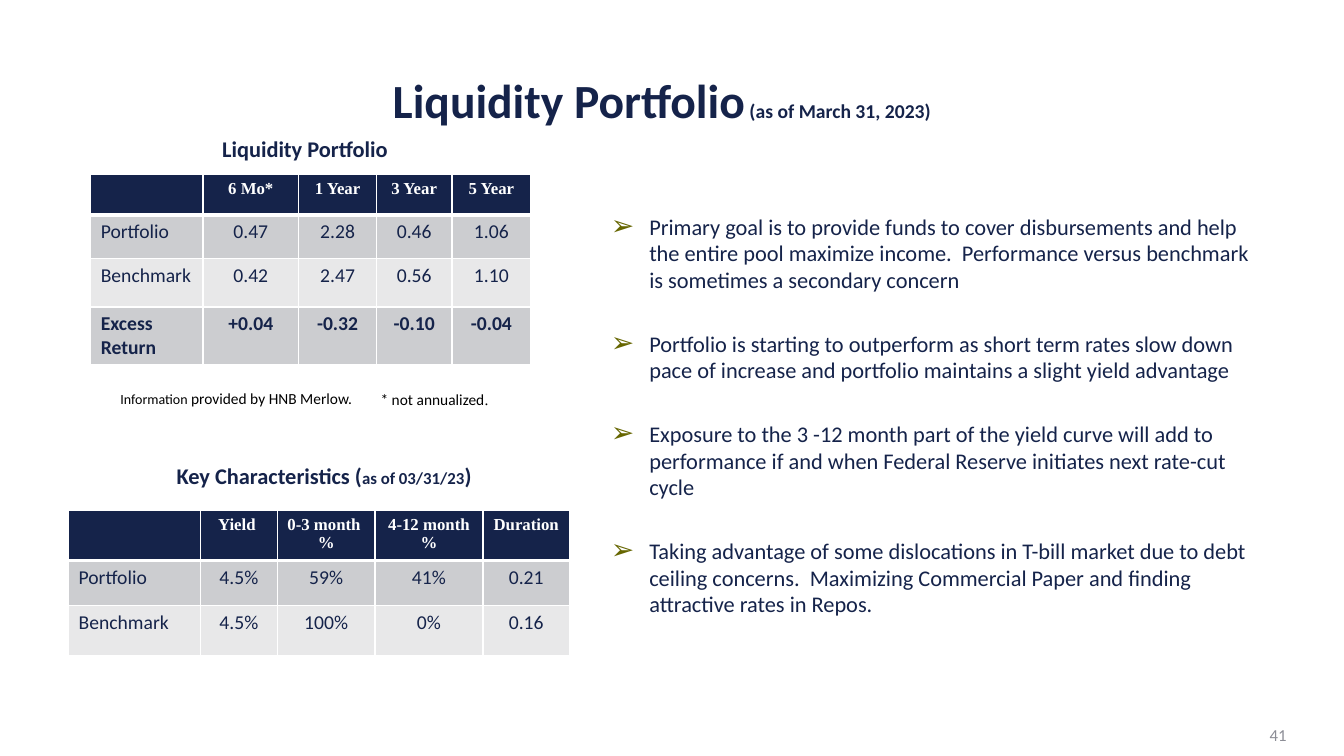
from lxml.etree import SubElement
from pptx import Presentation
from pptx.dml.color import RGBColor as RGB
from pptx.enum.text import MSO_ANCHOR as Anchor, MSO_AUTO_SIZE as AutoSize, PP_ALIGN as Align
from pptx.oxml.ns import qn
from pptx.util import Inches, Pt

COLORS = {"navy": "15234A", "white": "FFFFFF", "black": "000000", "gray": "8C8D96",
          "band_dark": "CCCDD0", "band_light": "E8E8E9", "olive": "666600"}
SANS, SERIF = "Calibri", "Times New Roman"

HEADING = [("Liquidity Portfolio", 34), (" (as of March 31, 2023)", 14)]
HEADING_AREA = (5.1, 10.27, 88.3, 6.67)

GOALS = [
    "Primary goal is to provide funds to cover disbursements and help the entire pool "
    "maximize income.  Performance versus benchmark is sometimes a secondary concern",
    "Portfolio is starting to outperform as short term rates slow down pace of increase "
    "and portfolio maintains a slight yield advantage",
    "Exposure to the 3 -12 month part of the yield curve will add to performance if and "
    "when Federal Reserve initiates next rate-cut cycle",
    "Taking advantage of some dislocations in T-bill market due to debt ceiling concerns.  "
    "Maximizing Commercial Paper and finding attractive rates in Repos.",
]
GOALS_AREA = (44.71, 27.47, 50.26, 60.27)

LABELS = [
    {"area": (3.68, 17.2, 38.03, 4.93), "color": "navy", "bold": True,
     "runs": [("Liquidity Portfolio", 16)]},
    {"area": (5.1, 60.53, 38.03, 4.93), "color": "navy", "bold": True,
     "runs": [("Key Characteristics (", 16), ("as of 03/31/23", 12), (")", 16)]},
    {"area": (5.1, 50.8, 24.98, 3.87), "color": "black",
     "runs": [("Information", 10), (" provided by HNB Merlow.", 11)]},
    {"area": (18.9, 50.93, 26.86, 3.87), "color": "black",
     "runs": [("* not annualized", 11), (".", 11, SERIF)]},
    {"area": (73.97, 94.53, 22.5, 5.33), "color": "gray", "align": Align.RIGHT,
     "anchor": Anchor.MIDDLE, "runs": [("41", 12)]},
]

TABLES = [
    {"corner": (6.75, 23.07), "columns": (8.35, 7.13, 5.78, 5.63, 5.85),
     "rows": (5.33, 5.73, 6.4, 7.6), "bold_row": 3,
     "cells": [("", "6 Mo*", "1 Year", "3 Year", "5 Year"),
               ("Portfolio", "0.47", "2.28", "0.46", "1.06"),
               ("Benchmark", "0.42", "2.47", "0.56", "1.10"),
               ("Excess Return", "+0.04", "-0.32", "-0.10", "-0.04")]},
    {"corner": (5.1, 67.47), "columns": (9.83, 5.7, 7.28, 8.03, 6.45),
     "rows": (6.67, 6, 6.53), "bold_row": None,
     "cells": [("", "Yield ", "0-3 month \n%", "4-12 month\n%", "Duration"),
               ("Portfolio", "4.5%", "59%", "41%", "0.21"),
               ("Benchmark", "4.5%", "100%", "0%", "0.16")]},
]

deck = Presentation()
deck.slide_width, deck.slide_height = Inches(13.33), Inches(7.5)
slide = deck.slides.add_slide(deck.slide_layouts[1])


def across(share):
    return round(deck.slide_width * share / 100)


def down(share):
    return round(deck.slide_height * share / 100)


def spans(area):
    left, top, width, height = area
    return across(left), down(top), across(width), down(height)


def move(holder, area):
    holder.left, holder.top, holder.width, holder.height = spans(area)
    holder.text_frame.auto_size = AutoSize.NONE


def style(run, size, color, font=SANS, bold=False):
    run.font.size, run.font.name, run.font.bold = Pt(size), font, bold
    run.font.color.rgb = RGB.from_string(COLORS[color])


def write(paragraph, runs, color, bold, align):
    paragraph.alignment = align
    for text, size, *font in runs:
        run = paragraph.add_run()
        run.text = text
        style(run, size, color, *(font or [SANS]), bold=bold)


def add_bullet(paragraph):
    props = paragraph._p.get_or_add_pPr()
    props.set("marL", str(Inches(0.38)))
    props.set("indent", str(-Inches(0.38)))
    tint = SubElement(props, qn("a:buClr"))
    SubElement(tint, qn("a:srgbClr"), val=COLORS["olive"])
    SubElement(props, qn("a:buSzPct"), val="125000")
    SubElement(props, qn("a:buChar"), char="➢")


def add_borders(cell, row):
    props = cell._tc.get_or_add_tcPr()
    heavy = {0: "lnB", 1: "lnT"}.get(row)
    for side in ("lnL", "lnR", "lnT", "lnB"):
        line = SubElement(props, qn("a:" + side), w=str(Pt(3 if side == heavy else 1)))
        paint = SubElement(line, qn("a:solidFill"))
        SubElement(paint, qn("a:srgbClr"), val=COLORS["white"])


def fill_cell(cell, text, row, column, bold_row):
    add_borders(cell, row)
    band = "navy" if row == 0 else "band_dark" if row % 2 else "band_light"
    cell.fill.solid()
    cell.fill.fore_color.rgb = RGB.from_string(COLORS[band])
    cell.text_frame.text = text
    for paragraph in cell.text_frame.paragraphs:
        paragraph.alignment = Align.CENTER if column else Align.LEFT
        for run in paragraph.runs:
            if row == 0:
                style(run, 12, "white", SERIF, True)
            else:
                style(run, 14, "navy", bold=row == bold_row)


def add_figures(content):
    left, top = content["corner"]
    columns, rows = content["columns"], content["rows"]
    area = (left, top, sum(columns), sum(rows))
    grid = slide.shapes.add_table(len(rows), len(columns), *spans(area)).table
    for column, share in zip(grid.columns, columns):
        column.width = across(share)
    for row, share in zip(grid.rows, rows):
        row.height = down(share)
    for r, values in enumerate(content["cells"]):
        for c, value in enumerate(values):
            fill_cell(grid.cell(r, c), value, r, c, content["bold_row"])


heading, goals = slide.shapes.title, slide.placeholders[1]
move(heading, HEADING_AREA)
heading.text_frame.vertical_anchor = Anchor.MIDDLE
heading_line = heading.text_frame.paragraphs[0]
heading_line.line_spacing = 0.9
write(heading_line, HEADING, "navy", True, Align.CENTER)

move(goals, GOALS_AREA)
goals.text_frame.text = "\n".join(GOALS)
for index, goal in enumerate(goals.text_frame.paragraphs):
    add_bullet(goal)
    goal.space_before = Pt(26 if index else 0)
    style(goal.runs[0], 16, "navy")

for figures in TABLES:
    add_figures(figures)

for label in LABELS:
    frame = slide.shapes.add_textbox(*spans(label["area"])).text_frame
    frame.word_wrap = True
    frame.vertical_anchor = label.get("anchor", Anchor.TOP)
    write(frame.paragraphs[0], label["runs"], label["color"],
          label.get("bold", False), label.get("align", Align.CENTER))

deck.save("out.pptx")
